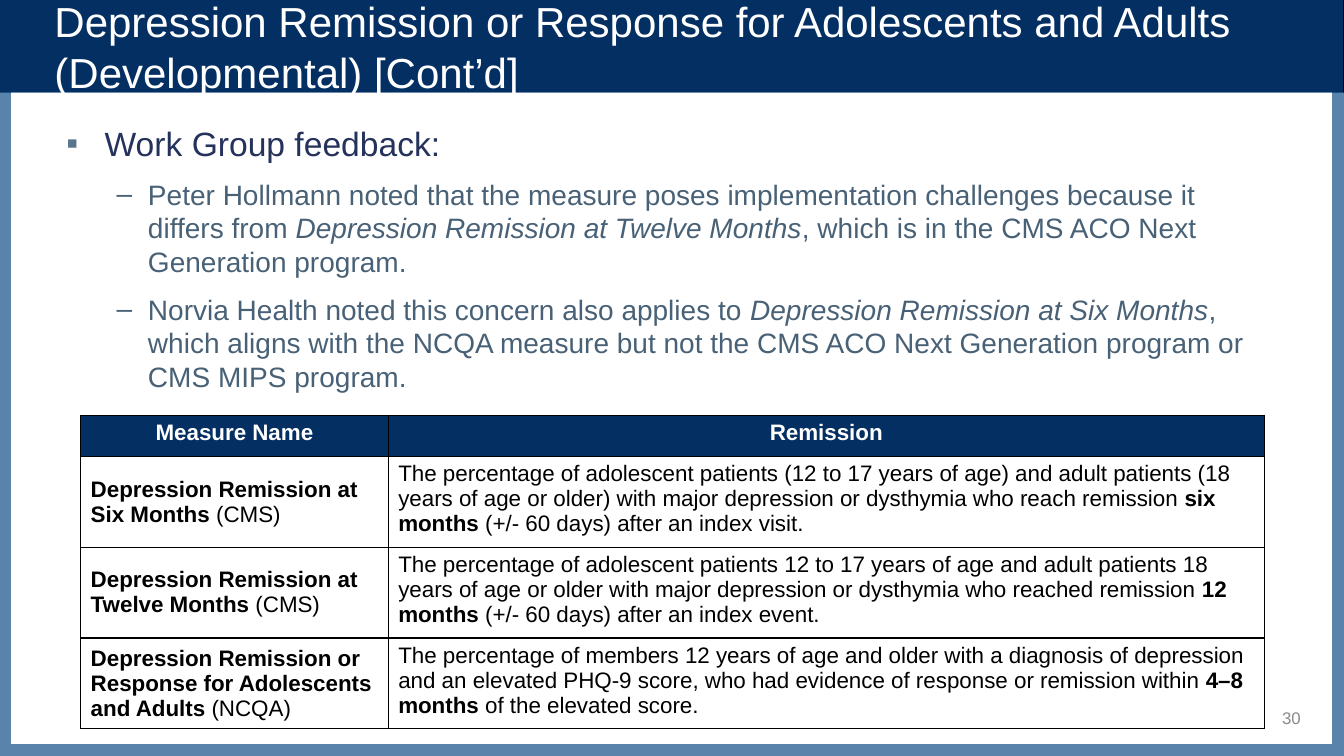
from dataclasses import dataclass

from lxml.etree import SubElement
from pptx import Presentation
from pptx.dml.color import RGBColor
from pptx.enum.shapes import MSO_SHAPE as Shape
from pptx.enum.text import MSO_ANCHOR as Anchor, PP_ALIGN as Align
from pptx.oxml.ns import qn
from pptx.util import Inches, Pt


@dataclass(frozen=True)
class Theme:
    font: str = "Arial"
    navy: str = "042F63"
    frame: str = "5983AA"
    white: str = "FFFFFF"
    black: str = "000000"
    heading: str = "25325B"
    detail: str = "486176"
    bullet: str = "57768E"
    page: str = "898989"
    title_size: int = 30
    heading_size: int = 24
    detail_size: int = 20
    table_size: int = 16
    page_size: int = 12


THEME = Theme()

TITLE = ("Depression Remission or Response for Adolescents and Adults "
         "(Developmental) [Cont’d]")

# Text between asterisks is emphasised: italic in bullets, bold in the table
FEEDBACK = [
    "Peter Hollmann noted that the measure poses implementation challenges because it "
    "differs from *Depression Remission at Twelve Months*, which is in the CMS ACO Next "
    "Generation program.",
    "Norvia Health noted this concern also applies to *Depression Remission at Six "
    "Months*, which aligns with the NCQA measure but not the CMS ACO Next Generation "
    "program or CMS MIPS program.",
]
MEASURES = [
    ("*Measure Name*", "*Remission*"),
    ("*Depression Remission at Six Months *(CMS)",
     "The percentage of adolescent patients (12 to 17 years of age) and adult patients "
     "(18 years of age or older) with major depression or dysthymia who reach remission "
     "*six months *(+/- 60 days) after an index visit."),
    ("*Depression Remission at Twelve Months *(CMS)",
     "The percentage of adolescent patients 12 to 17 years of age and adult patients 18 "
     "years of age or older with major depression or dysthymia who reached remission "
     "*12 months *(+/- 60 days) after an index event."),
    ("*Depression Remission or Response for Adolescents and Adults *(NCQA)",
     "The percentage of members 12 years of age and older with a diagnosis of depression "
     "and an elevated PHQ-9 score, who had evidence of response or remission within "
     "*4–8 months *of the elevated score."),
]


def rgb(color):
    return RGBColor.from_string(color)


def write(paragraph, text, size, color, emphasis="bold"):
    for position, part in enumerate(text.split("*")):
        if part:
            run = paragraph.add_run()
            run.text = part
            run.font.name = THEME.font
            run.font.size = Pt(size)
            run.font.color.rgb = rgb(color)
            setattr(run.font, emphasis, position % 2 == 1)


def add_panel(slide, box, color, outline=None):
    panel = slide.shapes.add_shape(Shape.RECTANGLE, *map(Inches, box))
    panel.shadow.inherit = False
    panel.fill.solid()
    panel.fill.fore_color.rgb = rgb(color)
    if outline:
        panel.line.color.rgb = rgb(outline)
        panel.line.width = Pt(0.75)
    else:
        panel.line.fill.background()


def add_text_frame(slide, box):
    frame = slide.shapes.add_textbox(*map(Inches, box)).text_frame
    frame.word_wrap = True
    return frame


def set_title(slide, text):
    title = slide.shapes.title
    title.left, title.top, title.width, title.height = map(
        Inches, (0.44, 0.1, 12.44, 0.72))
    title.text_frame.word_wrap = True
    title.text_frame.vertical_anchor = Anchor.MIDDLE
    heading = title.text_frame.paragraphs[0]
    heading.alignment = Align.LEFT
    write(heading, text, THEME.title_size, THEME.white)
    # Bring the title in front of the panels
    title.element.getparent().append(title.element)


def add_bullet(paragraph, mark, color, indent, hanging):
    properties = paragraph._p.get_or_add_pPr()
    properties.set("marL", str(Inches(indent)))
    properties.set("indent", str(-Inches(hanging)))
    bullet_color = SubElement(properties, qn("a:buClr"))
    SubElement(bullet_color, qn("a:srgbClr"), val=color)
    SubElement(properties, qn("a:buFont"), typeface=THEME.font)
    SubElement(properties, qn("a:buChar"), char=mark)


def add_feedback(slide):
    frame = add_text_frame(slide, (0.56, 1.17, 12, 2.9))
    heading = frame.paragraphs[0]
    write(heading, "Work Group feedback:", THEME.heading_size, THEME.heading)
    heading.space_before, heading.space_after = Pt(4.8), Pt(6)
    add_bullet(heading, "▪", THEME.bullet, 0.38, 0.38)
    for note in FEEDBACK:
        detail = frame.add_paragraph()
        detail.level = 1
        write(detail, note, THEME.detail_size, THEME.detail, "italic")
        detail.space_before, detail.space_after = Pt(4), Pt(6)
        add_bullet(detail, "–", THEME.detail, 0.81, 0.31)


def add_borders(cell):
    properties = cell._tc.get_or_add_tcPr()
    for position, side in enumerate(("a:lnL", "a:lnR", "a:lnT", "a:lnB")):
        border = properties.makeelement(qn(side), {"w": str(Pt(1))})
        fill = SubElement(border, qn("a:solidFill"))
        SubElement(fill, qn("a:srgbClr"), val=THEME.black)
        properties.insert(position, border)


def add_measures(slide):
    measures = slide.shapes.add_table(
        len(MEASURES), 2, *map(Inches, (0.8, 4.12, 11.74, 2.93))).table
    for column, width in zip(measures.columns, (3.05, 8.69)):
        column.width = Inches(width)
    for row_index, texts in enumerate(MEASURES):
        is_header = row_index == 0
        measures.rows[row_index].height = Inches(0.41 if is_header else 0.84)
        for column_index, text in enumerate(texts):
            cell = measures.cell(row_index, column_index)
            cell.fill.solid()
            cell.fill.fore_color.rgb = rgb(THEME.navy if is_header else THEME.white)
            is_name = column_index == 0 and not is_header
            cell.vertical_anchor = Anchor.MIDDLE if is_name else Anchor.TOP
            paragraph = cell.text_frame.paragraphs[0]
            paragraph.alignment = Align.CENTER if is_header else Align.LEFT
            write(paragraph, text, THEME.table_size,
                  THEME.white if is_header else THEME.black)
            add_borders(cell)


def add_page_number(slide, number):
    frame = add_text_frame(slide, (12.22, 7, 0.78, 0.25))
    frame.vertical_anchor = Anchor.MIDDLE
    paragraph = frame.paragraphs[0]
    paragraph.alignment = Align.RIGHT
    write(paragraph, number, THEME.page_size, THEME.page)


def main():
    deck = Presentation()
    deck.slide_width, deck.slide_height = Inches(13.33), Inches(7.5)
    slide = deck.slides.add_slide(deck.slide_layouts[5])

    # Title band and framed page
    add_panel(slide, (0, 0, 13.33, 0.93), THEME.navy, THEME.black)
    add_panel(slide, (0, 0.92, 13.36, 6.59), THEME.frame)
    add_panel(slide, (0.11, 0.92, 13.1, 6.46), THEME.white)

    # Content
    set_title(slide, TITLE)
    add_feedback(slide)
    add_page_number(slide, "30")
    add_measures(slide)

    deck.save("out.pptx")


if __name__ == "__main__":
    main()
